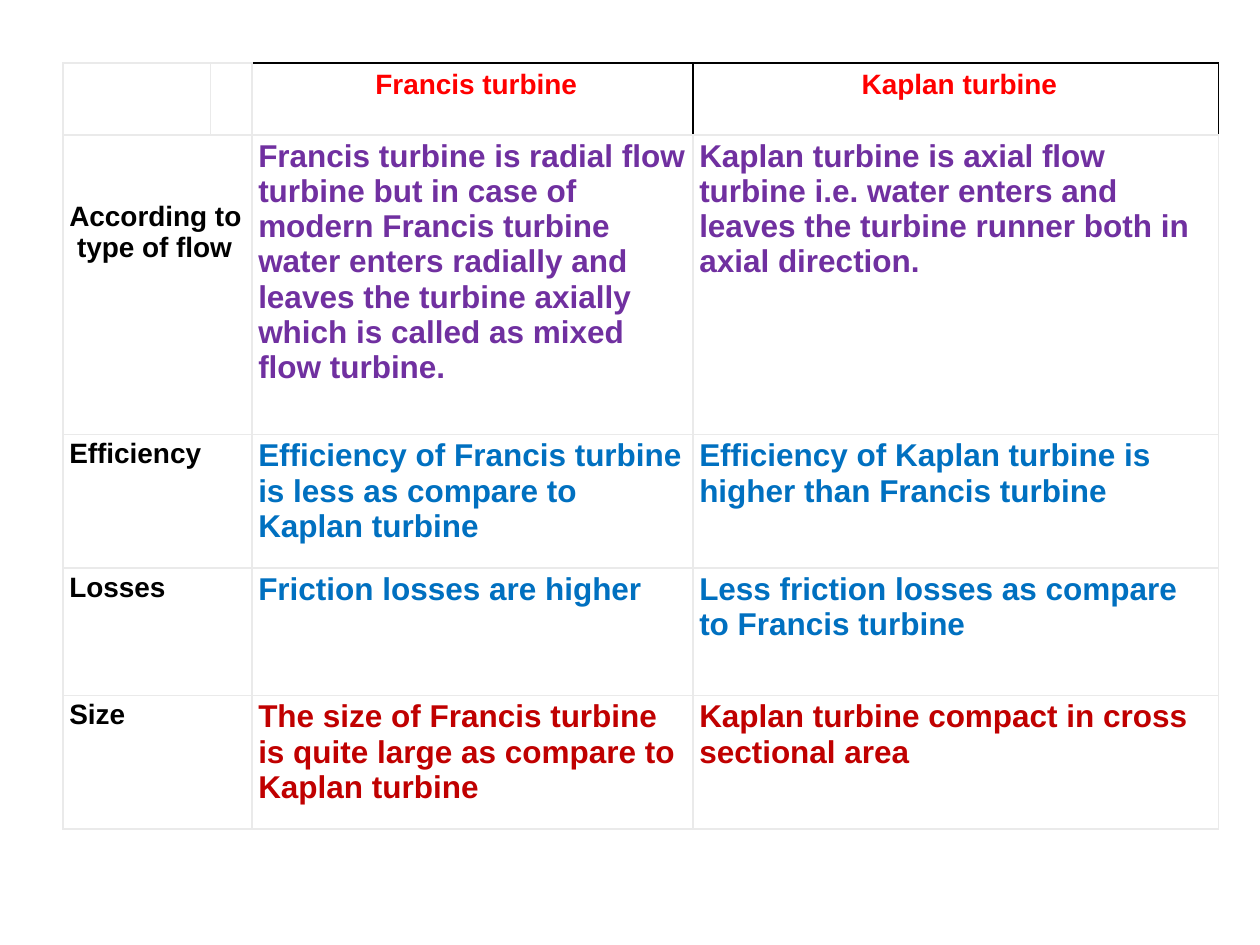
from lxml import etree
from pptx import Presentation
from pptx import util as u
from pptx.dml import color
from pptx.enum import text
from pptx.oxml import ns

COLS = [1.17, 0.33, 3.5, 4.17]
ROWS = [0.57, 2.38, 1.06, 1.01, 1.06]
HEADS = [" Francis turbine", " Kaplan turbine"]
BODY = [
    ("According to\n type of flow", "7030A0",
     "Francis turbine is radial flow turbine but in case of modern Francis turbine "
     "water enters radially and leaves the turbine axially which is called as mixed "
     "flow turbine.",
     "Kaplan turbine is axial flow turbine i.e. water enters and leaves the turbine "
     "runner both in axial direction."),
    ("Efficiency", "0070C0",
     "Efficiency of Francis turbine is less as compare to Kaplan turbine",
     "Efficiency of Kaplan turbine is higher than Francis turbine"),
    ("Losses", "0070C0",
     "Friction losses are higher",
     "Less friction losses as compare to Francis turbine"),
    ("Size", "C00000",
     "The size of Francis turbine is quite large as compare to Kaplan turbine",
     "Kaplan turbine compact in cross sectional area"),
]
GRID, DARK = "EAEAEA", "000000"


def rgb(tone):
    return color.RGBColor.from_string(tone)


def edge(cell, dark=""):
    props = cell._tc.get_or_add_tcPr()
    for side in "LRTB":
        line = etree.SubElement(props, ns.qn("a:ln" + side), w=str(u.Pt(1)))
        fill = etree.SubElement(line, ns.qn("a:solidFill"))
        tone = DARK if side in dark else GRID
        etree.SubElement(fill, ns.qn("a:srgbClr"), val=tone)


def write(cell, words, size, tone, align=text.PP_ALIGN.LEFT, top=0.03):
    cell.text = words
    cell.margin_left = cell.margin_right = u.Inches(0.05)
    cell.margin_top, cell.margin_bottom = u.Inches(top), u.Inches(0.03)
    for para in cell.text_frame.paragraphs:
        para.alignment = align
        font = para.font
        font.name, font.size, font.bold = "Arial", u.Pt(size), True
        font.color.rgb = rgb(tone)


def grid(slide):
    frame = slide.shapes.add_table(
        len(ROWS), len(COLS), u.Inches(0.5), u.Inches(0.5),
        u.Inches(sum(COLS)), u.Inches(sum(ROWS)))
    table = frame.table
    table.first_row = table.horz_banding = False
    for col, width in zip(table.columns, COLS):
        col.width = u.Inches(width)
    for row, height in zip(table.rows, ROWS):
        row.height = u.Inches(height)
    dark = {(0, 2): "TR", (0, 3): "LTR"}
    for r in range(len(ROWS)):
        for c in range(len(COLS)):
            cell = table.cell(r, c)
            edge(cell, dark.get((r, c), ""))
            if r:
                cell.fill.solid()
                cell.fill.fore_color.rgb = rgb("FFFFFF")
            else:
                cell.fill.background()
    return table


def main():
    deck = Presentation()
    deck.slide_width, deck.slide_height = u.Inches(10), u.Inches(7.5)
    slide = deck.slides.add_slide(deck.slide_layouts[6])
    table = grid(slide)
    for c, head in enumerate(HEADS, 2):
        write(table.cell(0, c), head, 16, "FF0000", text.PP_ALIGN.CENTER, 0.05)
    for r, (label, tone, *facts) in enumerate(BODY, 1):
        table.cell(r, 0).merge(table.cell(r, 1))
        write(table.cell(r, 0), label, 16, "000000", top=0.53 if r == 1 else 0.03)
        for c, fact in enumerate(facts, 2):
            write(table.cell(r, c), fact, 18, tone)
    deck.save("out.pptx")


if __name__ == "__main__":
    main()
